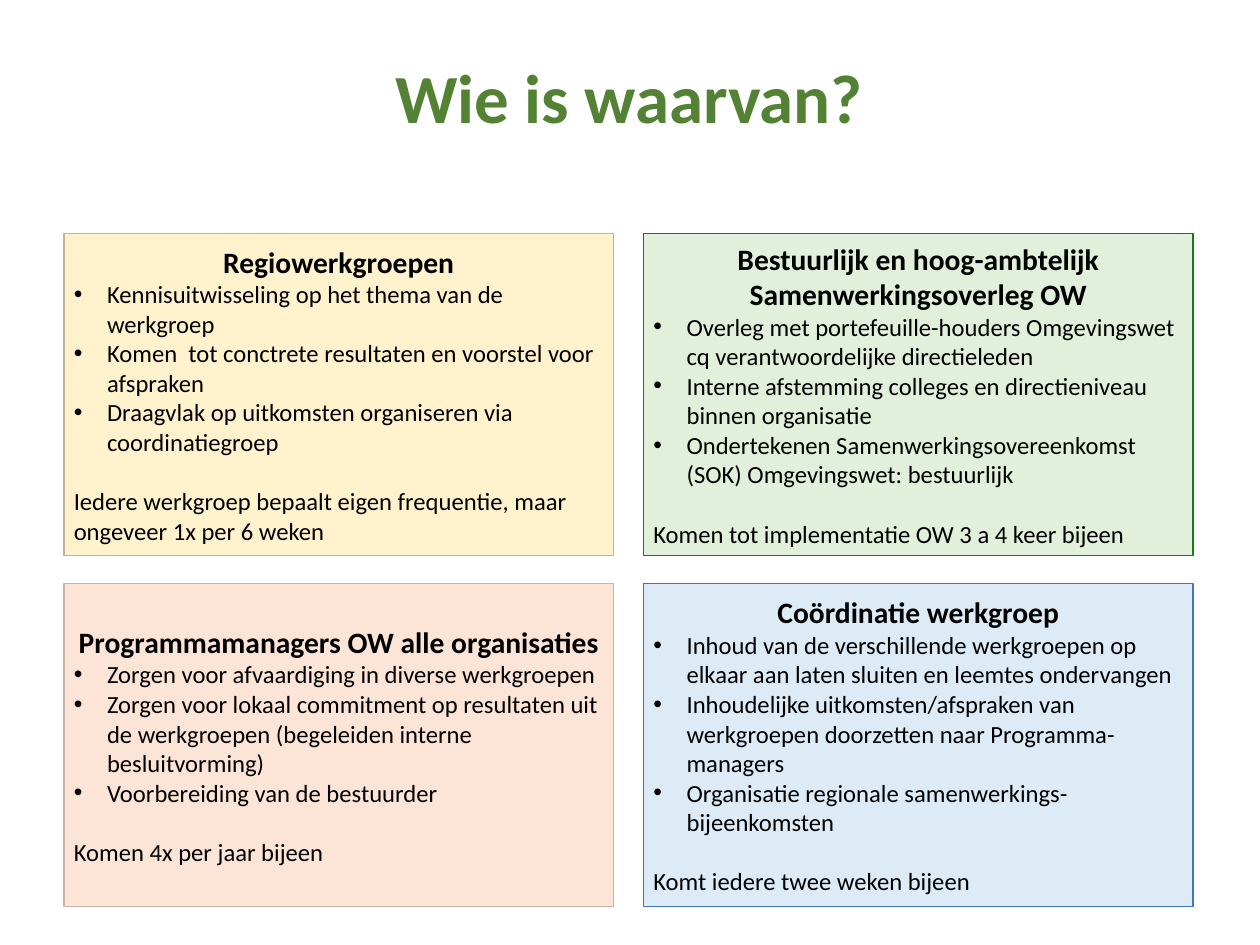
from dataclasses import dataclass

from lxml.etree import SubElement
from pptx import Presentation
from pptx.dml.color import RGBColor
from pptx.enum.shapes import MSO_SHAPE
from pptx.enum.text import MSO_ANCHOR, PP_ALIGN
from pptx.oxml.ns import qn
from pptx.slide import Slide
from pptx.text.text import TextFrame, _Paragraph
from pptx.util import Pt

BLACK = RGBColor(0x00, 0x00, 0x00)
GREEN = RGBColor(0x54, 0x82, 0x35)
YELLOW_FILL = RGBColor(0xFF, 0xF2, 0xCC)
YELLOW_LINE = RGBColor(0xBE, 0xB5, 0x99)
GREEN_FILL = RGBColor(0xE2, 0xEF, 0xDA)
GREEN_LINE = RGBColor(0x0D, 0x81, 0x14)
PINK_FILL = RGBColor(0xFC, 0xE4, 0xD6)
PINK_LINE = RGBColor(0xC6, 0xB3, 0xA9)
BLUE_FILL = RGBColor(0xDD, 0xEB, 0xF7)
BLUE_LINE = RGBColor(0x44, 0x72, 0xC4)

LEFT, TOP = 52, 189.5
WIDTH, HEIGHT = 446.5, 262
STEP_X, STEP_Y = 471, 285
INSET = 8
INDENT = 27


@dataclass
class Group:
    head: str
    tasks: list[str]
    rhythm: str
    fill: RGBColor
    line: RGBColor


GROUPS = [
    Group("Regiowerkgroepen",
          ["Kennisuitwisseling op het thema van de werkgroep",
           "Komen  tot conctrete resultaten en voorstel voor afspraken",
           "Draagvlak op uitkomsten organiseren via coordinatiegroep"],
          "Iedere werkgroep bepaalt eigen frequentie, maar ongeveer 1x per 6 weken",
          YELLOW_FILL, YELLOW_LINE),
    Group("Bestuurlijk en hoog-ambtelijk Samenwerkingsoverleg OW",
          ["Overleg met portefeuille-houders Omgevingswet cq verantwoordelijke directieleden",
           "Interne afstemming colleges en directieniveau binnen organisatie",
           "Ondertekenen Samenwerkingsovereenkomst (SOK) Omgevingswet: bestuurlijk"],
          "Komen tot implementatie OW 3 a 4 keer bijeen",
          GREEN_FILL, GREEN_LINE),
    Group("Programmamanagers OW alle organisaties",
          ["Zorgen voor afvaardiging in diverse werkgroepen",
           "Zorgen voor lokaal commitment op resultaten uit de werkgroepen "
           "(begeleiden interne besluitvorming)",
           "Voorbereiding van de bestuurder"],
          "Komen 4x per jaar bijeen",
          PINK_FILL, PINK_LINE),
    Group("Coördinatie werkgroep",
          ["Inhoud van de verschillende werkgroepen op elkaar aan laten sluiten "
           "en leemtes ondervangen",
           "Inhoudelijke uitkomsten/afspraken van werkgroepen doorzetten naar "
           "Programma-managers",
           "Organisatie regionale samenwerkings-bijeenkomsten"],
          "Komt iedere twee weken bijeen",
          BLUE_FILL, BLUE_LINE),
]


def set_inset(frame: TextFrame, inset: float) -> None:
    frame.margin_left = frame.margin_right = Pt(inset)
    frame.margin_top = frame.margin_bottom = Pt(inset)


def set_font(para: _Paragraph, size: float, color: RGBColor, bold: bool) -> None:
    font = para.font
    font.name = "Calibri"
    font.size = Pt(size)
    font.bold = bold
    font.color.rgb = color


def add_bullet(para: _Paragraph) -> None:
    props = para._p.get_or_add_pPr()
    props.set("marL", str(Pt(INDENT)))
    props.set("indent", str(-Pt(INDENT)))
    SubElement(props, qn("a:buFont"), typeface="Arial")
    SubElement(props, qn("a:buChar"), char="•")


def add_title(slide: Slide, text: str) -> None:
    box = slide.shapes.add_textbox(Pt(172), Pt(16.5), Pt(679), Pt(99.5))
    frame = box.text_frame
    frame.word_wrap = True
    frame.vertical_anchor = MSO_ANCHOR.BOTTOM
    set_inset(frame, 3.6)
    para = frame.paragraphs[0]
    para.text = text
    para.alignment = PP_ALIGN.CENTER
    para.line_spacing = 0.9
    set_font(para, 56, GREEN, True)


def add_group(slide: Slide, group: Group, left: float, top: float) -> None:
    box = slide.shapes.add_shape(
        MSO_SHAPE.RECTANGLE, Pt(left), Pt(top), Pt(WIDTH), Pt(HEIGHT))
    box.shadow.inherit = False
    box.fill.solid()
    box.fill.fore_color.rgb = group.fill
    box.line.color.rgb = group.line
    box.line.width = Pt(1)

    frame = box.text_frame
    frame.word_wrap = True
    frame.vertical_anchor = MSO_ANCHOR.MIDDLE
    set_inset(frame, INSET)

    head = frame.paragraphs[0]
    head.text = group.head
    head.alignment = PP_ALIGN.CENTER
    set_font(head, 24, BLACK, True)

    for task in group.tasks:
        para = frame.add_paragraph()
        para.text = task
        para.alignment = PP_ALIGN.LEFT
        add_bullet(para)
        set_font(para, 20, BLACK, False)

    last = frame.add_paragraph()
    last.text = group.rhythm
    last.alignment = PP_ALIGN.LEFT
    last.space_before = Pt(24)
    set_font(last, 20, BLACK, False)


def main() -> None:
    deck = Presentation()
    deck.slide_width, deck.slide_height = Pt(1024), Pt(768)
    slide = deck.slides.add_slide(deck.slide_layouts[6])
    add_title(slide, "Wie is waarvan?")
    for i, group in enumerate(GROUPS):
        row, col = divmod(i, 2)
        add_group(slide, group, LEFT + col * STEP_X, TOP + row * STEP_Y)
    deck.save("out.pptx")


if __name__ == "__main__":
    main()
